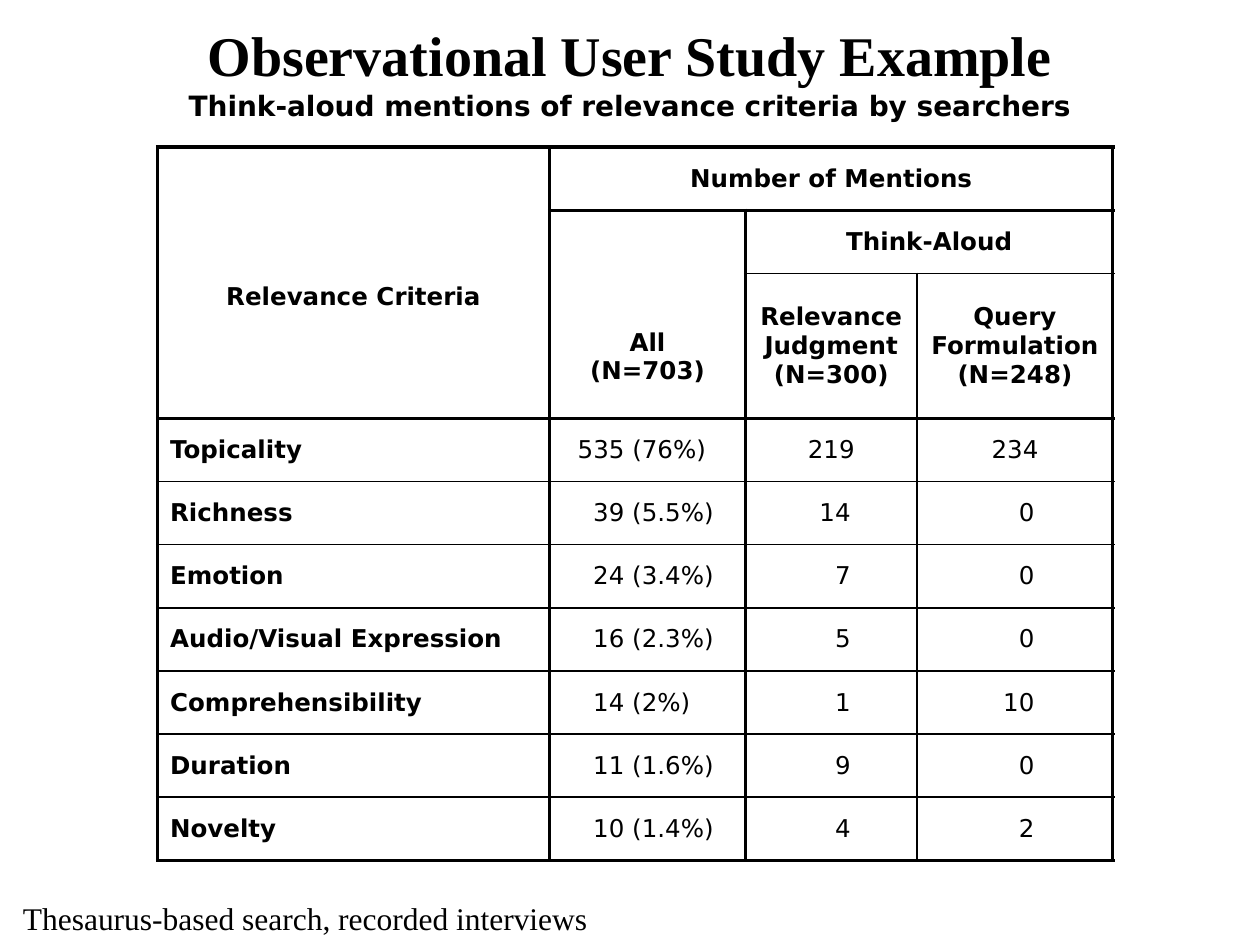
from pptx import Presentation
from pptx.dml.color import RGBColor
from pptx.enum.text import MSO_ANCHOR, MSO_AUTO_SIZE, PP_ALIGN
from pptx.oxml.ns import qn
from pptx.util import Pt
from lxml import etree

BLACK = RGBColor(0, 0, 0)
CENTER, LEFT = PP_ALIGN.CENTER, PP_ALIGN.LEFT
MIDDLE, TOP = MSO_ANCHOR.MIDDLE, MSO_ANCHOR.TOP
FIT_SHAPE = MSO_AUTO_SIZE.SHAPE_TO_FIT_TEXT
SERIF, SANS = "Times New Roman", "DejaVu Sans"

COLUMN_WIDTHS = [224, 112, 98, 112]
ROW_HEIGHTS = [36.1, 36.1, 82.9] + [36.1] * 7
COLUMN_RULES = [2, 2, 2, 1, 2]
ROW_RULES = [2, 2, 1, 2] + [1] * 6 + [2]
LINE_HEIGHT = 16.3
DIGIT_INDENT = 4.45

MERGES = [(0, 0, 2, 0), (0, 1, 0, 3), (1, 1, 2, 1), (1, 2, 1, 3)]
HEADINGS = [
    (0, 0, ["Relevance Criteria"], 1),
    (0, 1, ["Number of Mentions"], 0),
    (1, 1, ["All", "(N=703)"], 3),
    (1, 2, ["Think-Aloud"], 0),
    (2, 2, ["Relevance Judgment", "(N=300)"], 0),
    (2, 3, ["Query", "Formulation", "(N=248)"], 0),
]
CRITERIA = [
    ("Topicality", "535 (76%)", "219", "234"),
    ("Richness", "39 (5.5%)", "14", "0"),
    ("Emotion", "24 (3.4%)", "7", "0"),
    ("Audio/Visual Expression", "16 (2.3%)", "5", "0"),
    ("Comprehensibility", "14 (2%)", "1", "10"),
    ("Duration", "11 (1.6%)", "9", "0"),
    ("Novelty", "10 (1.4%)", "4", "2"),
]


def add_run(para, text, size, font, bold=False):
    run = para.add_run()
    run.text = text
    run.font.size = Pt(size)
    run.font.name = font
    run.font.bold = bold
    run.font.color.rgb = BLACK


def add_lines(frame, lines, align):
    for index, (text, size, font, bold) in enumerate(lines):
        para = frame.add_paragraph() if index else frame.paragraphs[0]
        para.alignment = align
        add_run(para, text, size, font, bold)


def fill_text_box(box, bounds, lines, align, anchor):
    box.left, box.top, box.width, box.height = map(Pt, bounds)
    frame = box.text_frame
    frame.word_wrap = False
    frame.auto_size = FIT_SHAPE
    frame.vertical_anchor = anchor
    add_lines(frame, lines, align)


def fill_cell(cell, texts, bold, align, indent=0):
    add_lines(cell.text_frame, [(text, 14, SANS, bold) for text in texts], align)
    if indent:
        properties = cell.text_frame.paragraphs[0]._p.get_or_add_pPr()
        properties.set("marL", str(Pt(indent)))
        properties.set("indent", "0")


def add_border(cell, side, width):
    line = etree.SubElement(cell._tc.get_or_add_tcPr(), qn("a:" + side))
    line.set("w", str(Pt(width)))
    if width:
        fill = etree.SubElement(line, qn("a:solidFill"))
        etree.SubElement(fill, qn("a:srgbClr")).set("val", str(BLACK))
    else:
        etree.SubElement(line, qn("a:noFill"))


def merged_area(row, column):
    for top, left, bottom, right in MERGES:
        if top <= row <= bottom and left <= column <= right:
            return top, left, bottom, right
    return row, column, row, column


def format_cell(cell, row, column):
    top, left, bottom, right = merged_area(row, column)
    is_origin = (row, column) == (top, left)
    edges = [
        ("lnL", column == left, COLUMN_RULES[left]),
        ("lnR", column == right, COLUMN_RULES[right + 1]),
        ("lnT", row == top, ROW_RULES[top]),
        ("lnB", row == bottom, ROW_RULES[bottom + 1]),
    ]
    for side, on_outline, width in edges:
        add_border(cell, side, width if is_origin or on_outline else 0)
    cell.fill.background()
    cell.vertical_anchor = MIDDLE


def add_mentions_table(slide):
    frame = slide.shapes.add_table(
        len(ROW_HEIGHTS), len(COLUMN_WIDTHS), Pt(90), Pt(84),
        Pt(sum(COLUMN_WIDTHS)), Pt(sum(ROW_HEIGHTS)))
    table = frame.table
    table.first_row = False
    table.horz_banding = False
    for column, width in zip(table.columns, COLUMN_WIDTHS):
        column.width = Pt(width)
    for row, height in zip(table.rows, ROW_HEIGHTS):
        row.height = Pt(height)
    for top, left, bottom, right in MERGES:
        table.cell(top, left).merge(table.cell(bottom, right))
    for row in range(len(ROW_HEIGHTS)):
        for column in range(len(COLUMN_WIDTHS)):
            format_cell(table.cell(row, column), row, column)
    for row, column, texts, lines_down in HEADINGS:
        cell = table.cell(row, column)
        fill_cell(cell, texts, True, CENTER)
        cell.margin_top = Pt(3.6 + lines_down * LINE_HEIGHT)
    for row, (criterion, total, *counts) in enumerate(CRITERIA, 3):
        fill_cell(table.cell(row, 0), [criterion], True, LEFT)
        total_indent = (2 if row == 3 else 4) * DIGIT_INDENT
        fill_cell(table.cell(row, 1), [total], False, LEFT, total_indent)
        for column, count in enumerate(counts, 2):
            indent = {1: 3, 2: 1, 3: 0}[len(count)] * DIGIT_INDENT
            fill_cell(table.cell(row, column), [count], False, CENTER, indent)


def main():
    deck = Presentation()
    deck.slide_width, deck.slide_height = Pt(720), Pt(540)
    slide = deck.slides.add_slide(deck.slide_layouts[5])
    title_lines = [
        ("Observational User Study Example", 32, SERIF, True),
        ("Think-aloud mentions of relevance criteria by searchers", 16, SANS, True),
    ]
    fill_text_box(slide.shapes.title, (98.6, 8, 522.8, 65.5),
                  title_lines, CENTER, MIDDLE)
    add_mentions_table(slide)
    note = slide.shapes.add_textbox(0, 0, 0, 0)
    note_lines = [("Thesaurus-based search, recorded interviews", 18, SERIF, False)]
    fill_text_box(note, (6, 510, 337.7, 28.8), note_lines, LEFT, TOP)
    deck.save("out.pptx")


if __name__ == "__main__":
    main()
